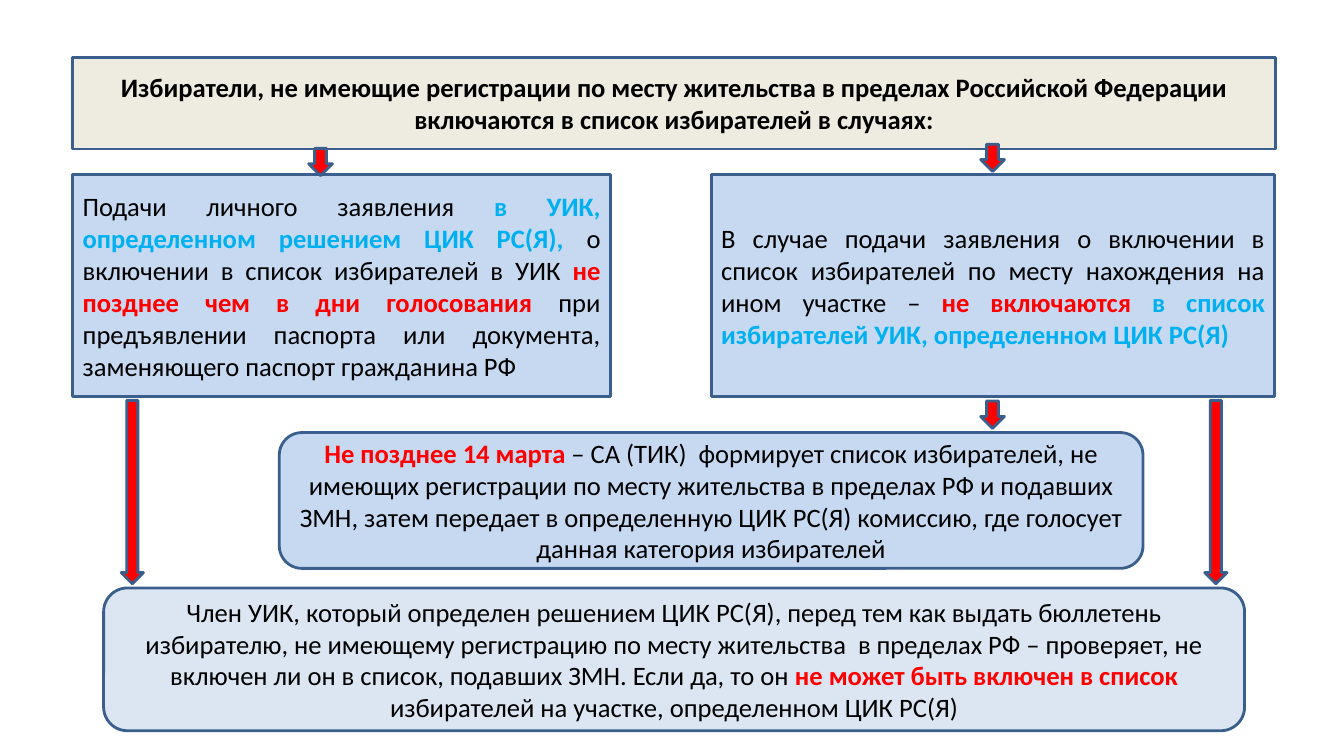
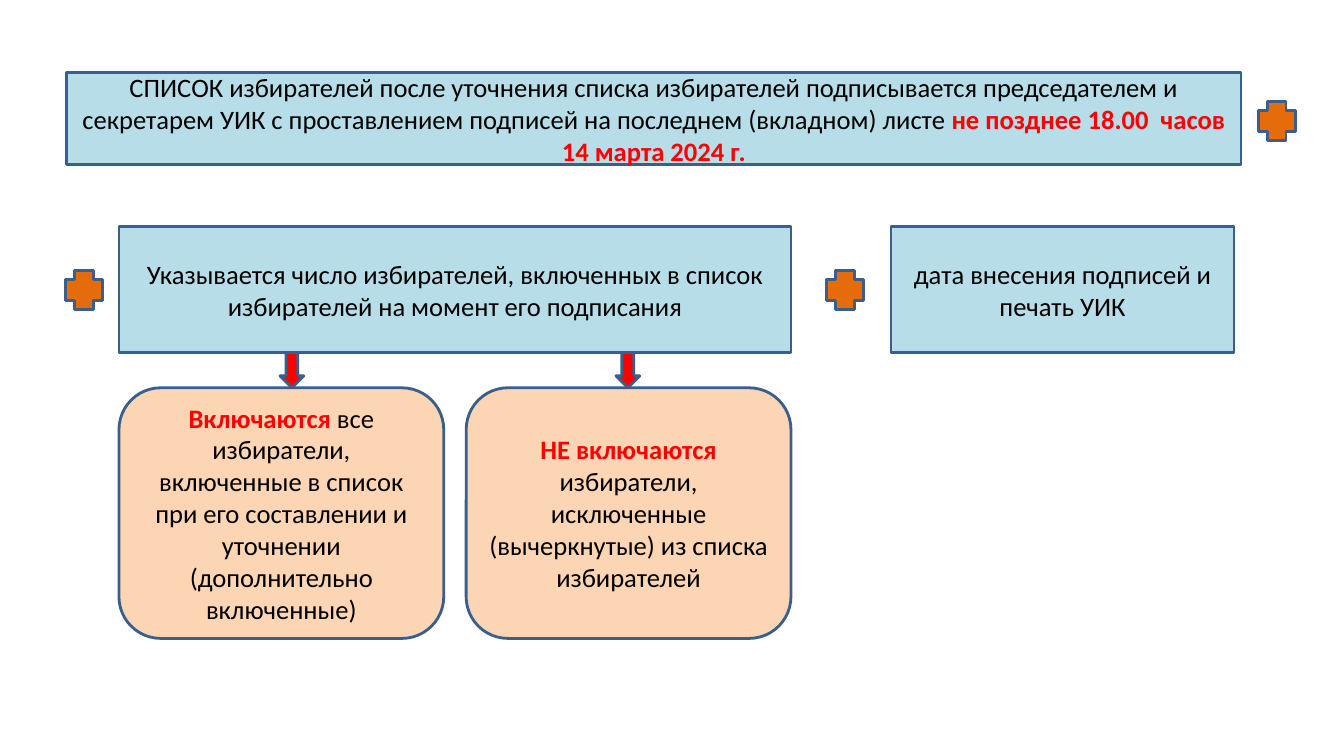
from lxml.etree import SubElement
from pptx import Presentation
from pptx.dml.color import RGBColor
from pptx.enum.shapes import MSO_SHAPE
from pptx.enum.text import MSO_ANCHOR, MSO_AUTO_SIZE, PP_ALIGN
from pptx.oxml.ns import qn
from pptx.util import Pt

COLORS = {
    "outline": "3A5F8C",
    "text": "000000",
    "warning": "FF0000",
    "accent": "00B0F0",
    "cream": "EEECE1",
    "blue": "C6D9F1",
    "pale_blue": "DCE6F2",
    "teal": "B7DEE8",
    "peach": "FCD5B5",
    "orange": "E46C0A",
}
FONT = "Calibri"
TITLE_ONLY = 5


def color(name):
    """Return the named palette colour."""
    return RGBColor.from_string(COLORS[name])


def paint(shape, fill):
    """Give a shape its fill, the shared outline and no shadow."""
    shape.shadow.inherit = False
    shape.fill.solid()
    shape.fill.fore_color.rgb = color(fill)
    shape.line.color.rgb = color("outline")
    shape.line.width = Pt(2)


def write(shape, spans, align=PP_ALIGN.CENTER, size=19, bold=False):
    """Write (text, colour) spans as one paragraph; coloured spans are bold."""
    frame = shape.text_frame
    frame.word_wrap = True
    frame.auto_size = MSO_AUTO_SIZE.NONE
    frame.vertical_anchor = MSO_ANCHOR.MIDDLE
    para = frame.paragraphs[0]
    para.alignment = align
    for text, tone in spans:
        span = para.add_run()
        span.text = text
        span.font.name = FONT
        span.font.size = Pt(size)
        span.font.bold = bold or tone != "text"
        span.font.color.rgb = color(tone)


def add_title(page, area, spans, fill, outline="rect", **text_format):
    """Turn the title placeholder into a filled box of the given outline."""
    title = page.shapes.title
    title.left, title.top, title.width, title.height = map(Pt, area)
    geometry = SubElement(title.element.spPr, qn("a:prstGeom"), prst=outline)
    SubElement(geometry, qn("a:avLst"))
    paint(title, fill)
    write(title, spans, **text_format)


def add_figure(page, kind, area, fill):
    """Add a painted preset shape."""
    figure = page.shapes.add_shape(kind, *map(Pt, area))
    paint(figure, fill)
    return figure


def add_box(page, area, spans, fill, kind=MSO_SHAPE.RECTANGLE, **text_format):
    """Add a painted box with text."""
    write(add_figure(page, kind, area, fill), spans, **text_format)


def add_arrow(page, center, top, height, width=17):
    """Add a red down arrow centred on a vertical axis."""
    area = (center - width / 2, top, width, height)
    add_figure(page, MSO_SHAPE.DOWN_ARROW, area, "warning")


def add_plus(page, center, middle, width=26.5, height=28):
    """Add an orange plus sign centred on a point."""
    area = (center - width / 2, middle - height / 2, width, height)
    add_figure(page, MSO_SHAPE.CROSS, area, "orange")


def build_unregistered_voters(page):
    """Show how voters without registration are listed."""
    add_title(page, (52, 41, 859, 65.5), [
        ("Избиратели, не имеющие регистрации по месту жительства в пределах "
         "Российской Федерации включаются в список избирателей в случаях:", "text"),
    ], "cream", outline="roundRect", bold=True)
    add_box(page, (52, 124.5, 384, 159), [
        ("Подачи личного заявления ", "text"),
        ("в УИК, определенном решением ЦИК РС(Я), ", "accent"),
        ("о включении в список избирателей в УИК ", "text"),
        ("не позднее чем в дни голосования", "warning"),
        (" при предъявлении паспорта или документа, заменяющего паспорт "
         "гражданина РФ", "text"),
    ], "blue", align=PP_ALIGN.JUSTIFY)
    add_box(page, (508, 124.5, 402.5, 159), [
        ("В случае подачи заявления о включении в список избирателей по месту "
         "нахождения на ином участке – ", "text"),
        ("не включаются ", "warning"),
        ("в список избирателей УИК, определенном ЦИК РС(Я)", "accent"),
    ], "blue", align=PP_ALIGN.JUSTIFY)
    add_box(page, (199.5, 309, 617, 97), [
        ("Не позднее 14 марта ", "warning"),
        ("– СА (ТИК)  формирует список избирателей, не имеющих регистрации по "
         "месту жительства в пределах РФ и подавших ЗМН, затем передает в "
         "определенную ЦИК РС(Я) комиссию, где голосует данная категория "
         "избирателей", "text"),
    ], "blue", MSO_SHAPE.ROUNDED_RECTANGLE)
    for center, top in ((229, 106), (709, 103), (709, 286.5)):
        add_arrow(page, center, top, 19.5)
    for center in (94.5, 868.5):
        add_arrow(page, center, 286, 131, width=16)
    add_box(page, (74, 420, 815, 102), [
        ("Член УИК, который определен решением ЦИК РС(Я), перед тем как выдать "
         "бюллетень избирателю, не имеющему регистрацию по месту жительства  в "
         "пределах РФ – проверяет, не включен ли он в список, подавших ЗМН. "
         "Если да, то он ", "text"),
        ("не может быть включен в список ", "warning"),
        ("избирателей на участке, определенном ЦИК РС(Я)", "text"),
    ], "pale_blue", MSO_SHAPE.ROUNDED_RECTANGLE)


def build_list_signing(page):
    """Show how the voter list is signed."""
    add_title(page, (47.5, 52, 839, 65.5), [
        ("СПИСОК избирателей после уточнения списка избирателей подписывается "
         "председателем и секретарем УИК с проставлением подписей на последнем "
         "(вкладном) листе ", "text"),
        ("не позднее 18.00  часов 14 марта 2024 г.", "warning"),
    ], "teal")
    add_box(page, (85, 162, 480, 90), [
        ("Указывается число избирателей, включенных в список избирателей на "
         "момент его подписания", "text"),
    ], "teal")
    add_box(page, (636.5, 162, 245, 90), [
        ("дата внесения подписей и печать УИК", "text"),
    ], "teal")
    for center, middle in ((912, 86.5), (60, 207), (603.5, 207)):
        add_plus(page, center, middle)
    groups = (
        (85, 208.5, "Включаются",
         " все избиратели, включенные в список при его составлении и уточнении "
         "(дополнительно включенные)"),
        (333, 448.5, "НЕ включаются",
         " избиратели, исключенные (вычеркнутые) из списка избирателей"),
    )
    for left, arrow_center, verdict, voters in groups:
        add_box(page, (left, 277, 232, 179), [(verdict, "warning"), (voters, "text")],
                "peach", MSO_SHAPE.ROUNDED_RECTANGLE)
        add_arrow(page, arrow_center, 252, 25)


def main():
    """Build and save the deck."""
    deck = Presentation()
    deck.slide_width, deck.slide_height = Pt(960), Pt(540)
    for build in (build_unregistered_voters, build_list_signing):
        build(deck.slides.add_slide(deck.slide_layouts[TITLE_ONLY]))
    deck.save("out.pptx")


if __name__ == "__main__":
    main()
